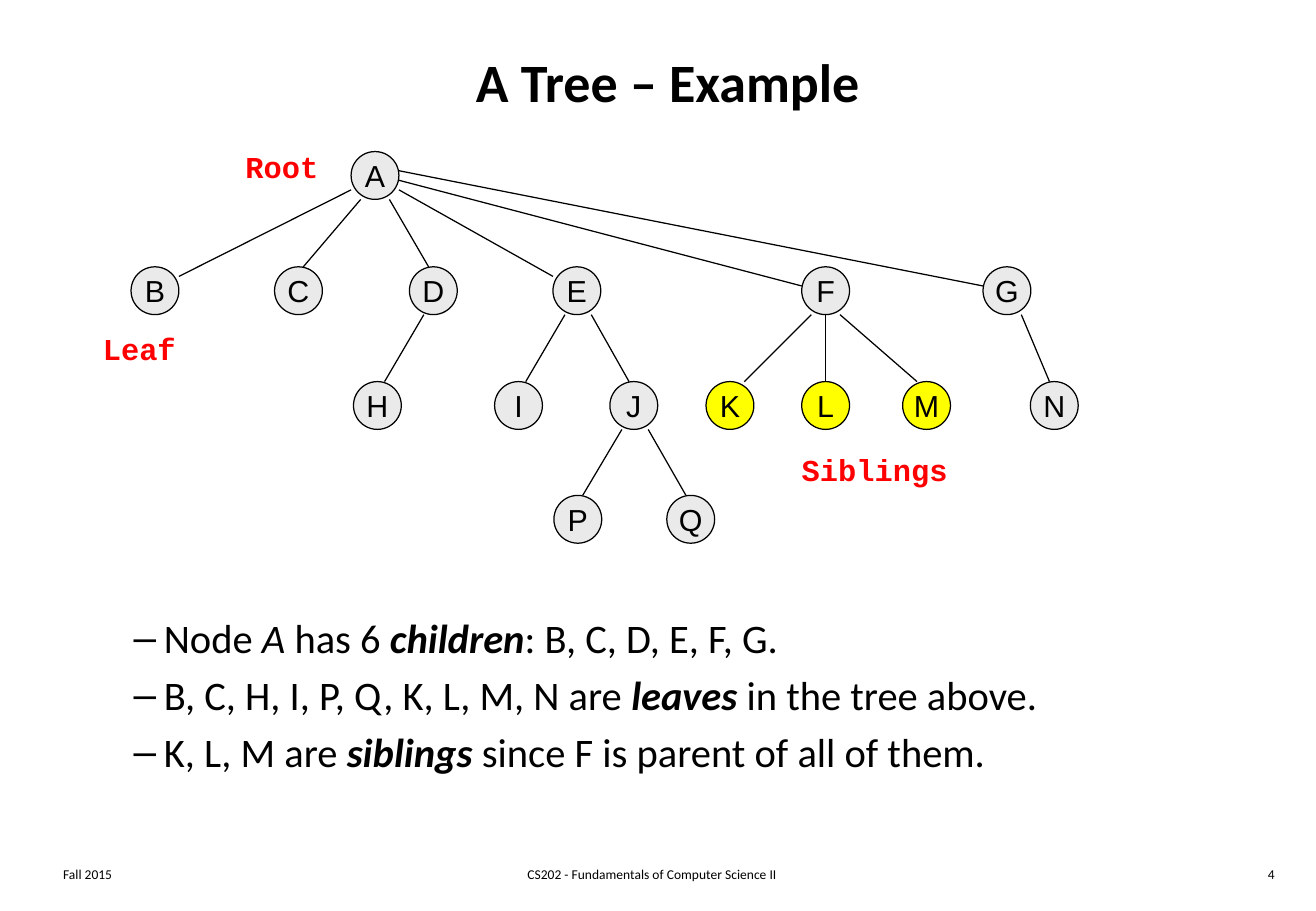
from pptx import Presentation
from pptx.dml.color import RGBColor
from pptx.enum.shapes import MSO_CONNECTOR, MSO_SHAPE
from pptx.enum.text import MSO_ANCHOR, MSO_AUTO_SIZE, PP_ALIGN
from pptx.oxml.ns import qn
from pptx.util import Cm, Pt
from lxml import etree

LEFT, MID, RIGHT = PP_ALIGN.LEFT, PP_ALIGN.CENTER, PP_ALIGN.RIGHT
MIDDLE, TOP = MSO_ANCHOR.MIDDLE, MSO_ANCHOR.TOP
FIXED = MSO_AUTO_SIZE.NONE
OVAL, STRAIGHT = MSO_SHAPE.OVAL, MSO_CONNECTOR.STRAIGHT
BLACK, RED, GREY, YELLOW = "000000", "FF0000", "EAEAEA", "FFFF00"
SANS, MONO, NODE = "Calibri", "Courier New", "Arial"

TITLE = "A Tree – Example "
POINTS = [
    [("Node ", ""), ("A", "i"), (" has 6 ", ""), ("children", "bi"),
     (": B, C, D, E, F, G. ", "")],
    [("B, C, H, I, P, Q, K, L, M, N are ", ""), ("leaves", "bi"),
     (" in the tree above.", "")],
    [("K, L, M are ", ""), ("siblings", "bi"),
     (" since F is parent of all of them. ", "")],
]
FOOT = [
    ("Fall 2015", 1.07, 5.74, LEFT),
    ("CS202 - Fundamentals of Computer Science II", 8.48, 10.31, MID),
    ("4", 21.16, 5.74, RIGHT),
]
LABELS = [
    ("Root ", 4.88, 2.97, 2.44),
    ("Leaf", 1.9, 6.78, 2.06),
    ("Siblings", 16.51, 9.32, 3.58),
]
LEVELS = [
    (3.17, {"A": 7.34}),
    (5.58, {"B": 2.74, "C": 5.74, "D": 8.56, "E": 11.56, "F": 16.76, "G": 20.55}),
    (7.98, {"H": 7.39, "I": 10.34, "J": 12.75, "K": 14.76, "L": 16.76,
            "M": 18.87, "N": 21.54}),
    (10.36, {"P": 11.58, "Q": 13.94}),
]
KIN = "KLM"
SIZE = 1.0
EDGES = [
    ("AB", (0, 0.8), (1, 0.2)),
    ("AC", (0.2, 1), (0.6, 0)),
    ("AD", (0.8, 1), (0.4, 0)),
    ("AE", (1, 0.8), (0, 0.2)),
    ("AF", (1, 0.6), (0, 0.4)),
    ("AG", (1, 0.4), (0, 0.4)),
    ("DH", (0.3, 1), (0.65, 0)),
    ("EI", (0.25, 1), (0.65, 0)),
    ("EJ", (0.8, 1), (0.4, 0)),
    ("FK", (0.2, 1), (0.8, 0)),
    ("FL", (0.5, 1), (0.5, 0)),
    ("FM", (0.8, 1), (0.3, 0)),
    ("GN", (0.8, 1), (0.4, 0)),
    ("JP", (0.25, 1), (0.6, 0)),
    ("JQ", (0.8, 1), (0.4, 0)),
]


def tint(code):
    return RGBColor.from_string(code)


def place(shape, x, y, w, h):
    shape.left, shape.top, shape.width, shape.height = Cm(x), Cm(y), Cm(w), Cm(h)


def write(para, runs, size, face=SANS, color=BLACK, align=LEFT):
    para.alignment = align
    for text, style in runs:
        run = para.add_run()
        run.text = text
        font = run.font
        font.name, font.size = face, Pt(size)
        font.bold, font.italic = "b" in style, "i" in style
        font.color.rgb = tint(color)


def stroke(line):
    line.color.rgb = tint(BLACK)
    line.width = Pt(0.75)


def note(text, x, y, w, h, *look, style=""):
    frame = shapes.add_textbox(Cm(x), Cm(y), Cm(w), Cm(h)).text_frame
    frame.word_wrap = False
    write(frame.paragraphs[0], [(text, style)], *look)


def join(start, end):
    link = shapes.add_connector(STRAIGHT, *map(Cm, start + end))
    stroke(link.line)
    etree.SubElement(link._element.spPr, qn("a:effectLst"))


def ring(name, x, y):
    node = shapes.add_shape(OVAL, Cm(x), Cm(y), Cm(SIZE), Cm(SIZE))
    node.shadow.inherit = False
    node.fill.solid()
    node.fill.fore_color.rgb = tint(YELLOW if name in KIN else GREY)
    stroke(node.line)
    frame = node.text_frame
    frame.word_wrap = False
    frame.vertical_anchor = MIDDLE
    write(frame.paragraphs[0], [(name, "")], 18, NODE, BLACK, MID)


deck = Presentation()
deck.slide_width, deck.slide_height = Cm(27.51), Cm(19.05)
slide = deck.slides.add_slide(deck.slide_layouts[1])
shapes = slide.shapes

title, body = slide.placeholders
place(title, 1.07, 0.43, 26.04, 2.54)
title.text_frame.vertical_anchor = MIDDLE
title.text_frame.auto_size = FIXED
write(title.text_frame.paragraphs[0], [(TITLE, "b")], 32, SANS, BLACK, MID)

place(body, 1.9, 12.7, 24, 4.78)
frame = body.text_frame
frame.auto_size = FIXED
frame.vertical_anchor = TOP
for rank, runs in enumerate(POINTS):
    para = frame.add_paragraph() if rank else frame.paragraphs[0]
    para.level = 1
    para.space_before = Pt(4.8)
    write(para, runs, 24)
    props = para._p.get_or_add_pPr()
    props.set("marL", str(Cm(1.27)))
    props.set("indent", str(Cm(-0.63)))
    etree.SubElement(props, qn("a:buChar")).set("char", "–")

spots = {name: (x, y) for y, row in LEVELS for name, x in row.items()}
for name, (x, y) in spots.items():
    ring(name, x, y)
for pair, *ends in EDGES:
    join(*[tuple(at + SIZE * part for at, part in zip(spots[name], end))
           for name, end in zip(pair, ends)])

for text, x, y, w in LABELS:
    note(text, x, y, w, 1.02, 18, MONO, RED, style="b")
for text, x, w, align in FOOT:
    note(text, x, 17.98, w, 0.64, 8, SANS, BLACK, align)

deck.save("out.pptx")
